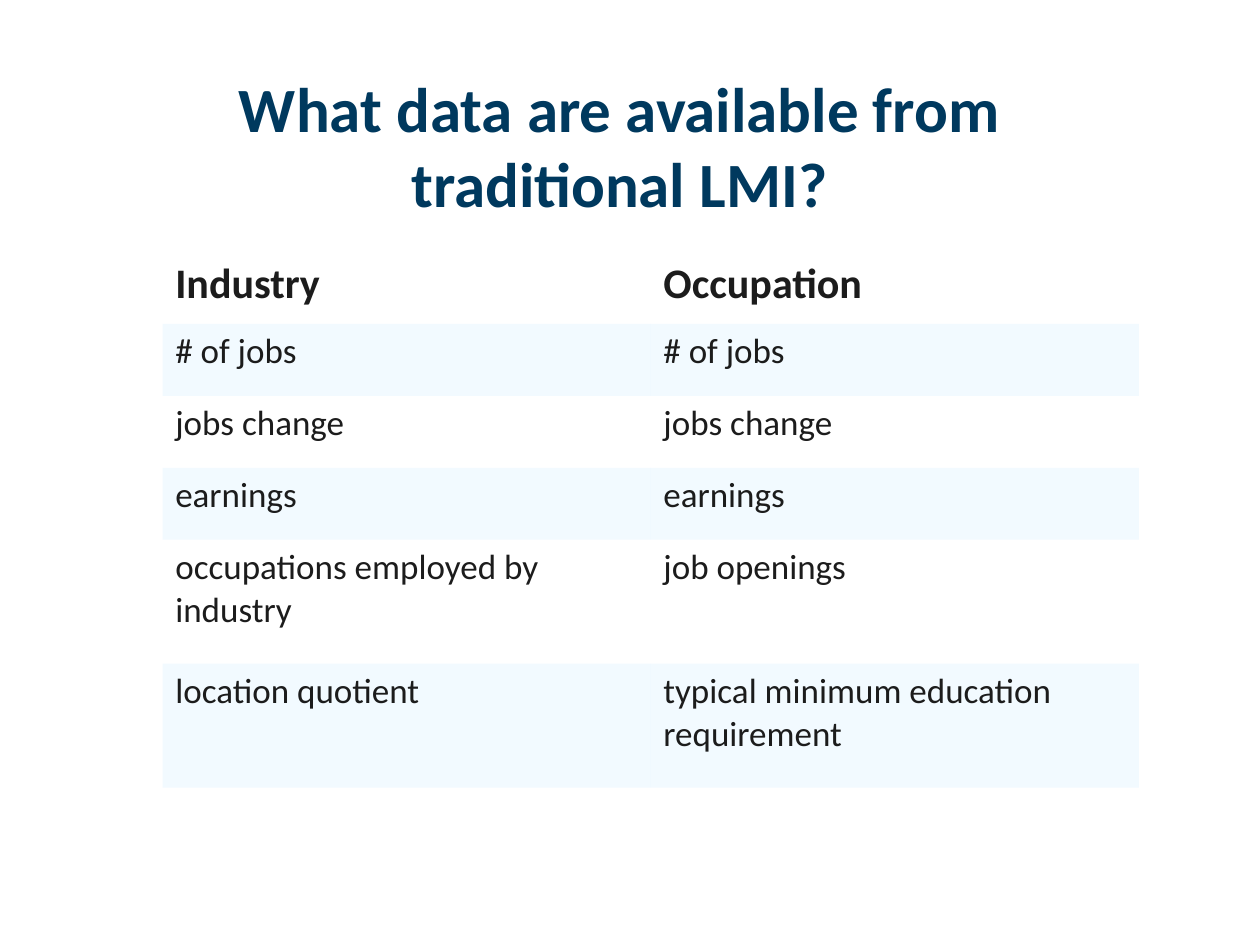
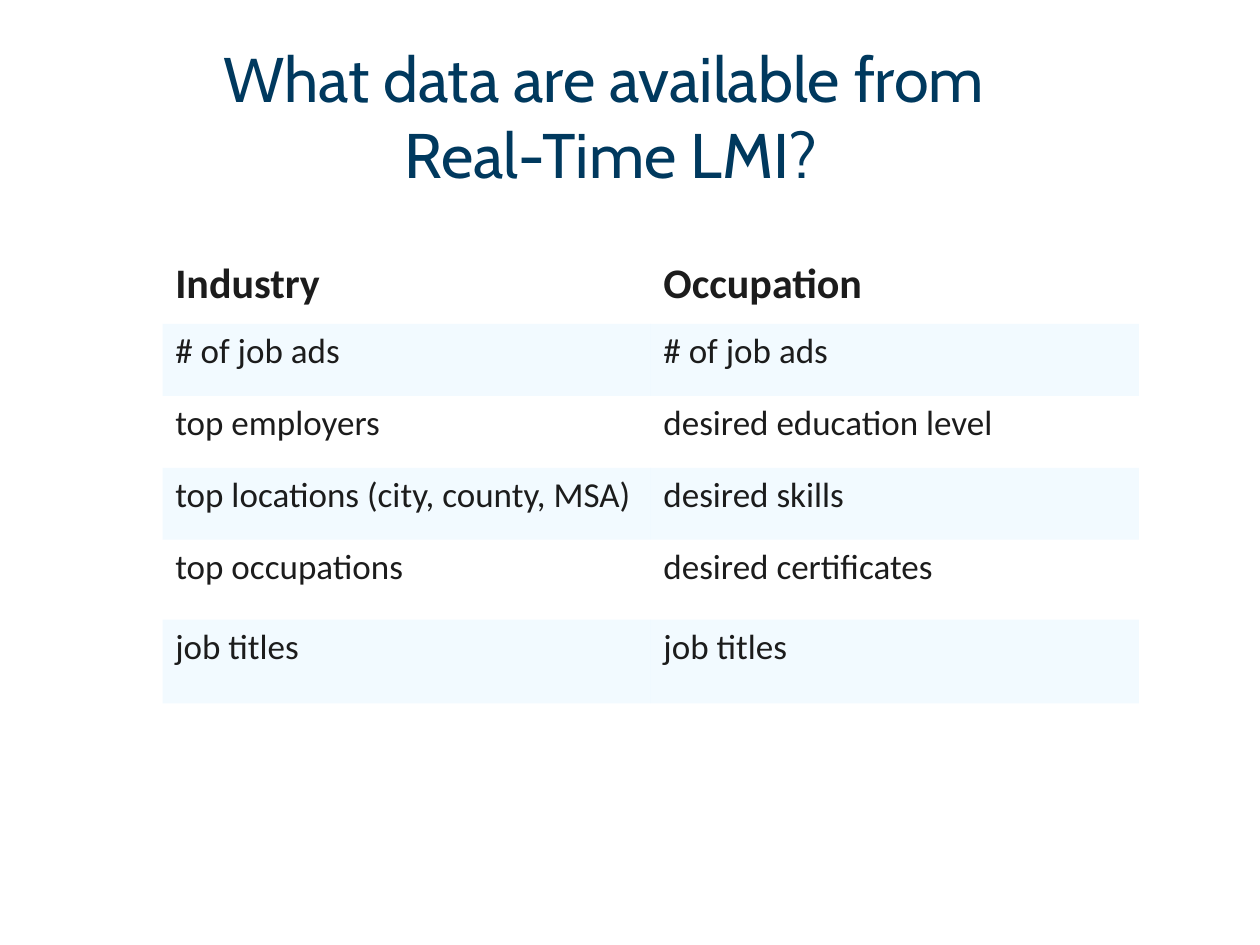
from lxml import etree
from pptx import Presentation
from pptx import util as u
from pptx.dml.color import RGBColor
from pptx.enum import text
from pptx.oxml import ns

NAVY = RGBColor(0x00, 0x39, 0x5E)
INK = RGBColor(0x1C, 0x1C, 0x1C)
BAND = RGBColor(0xBF, 0xE6, 0xFF)
BAND_OPACITY = "20000"
NO_GRID_STYLE = "{2D5ABB26-0587-4C30-8999-92F81FD0307C}"
COLUMN_WIDTH = 9.84
ROW_HEIGHT = 1.45
HEADINGS = ("Industry", "Occupation")

SLIDES = [
    {
        "title": ["What data are available from traditional LMI?"],
        "box": (2.54, 1.27, 19.9, 2.75),
        "font": "Calibri",
        "bold": True,
        "anchor": text.MSO_ANCHOR.TOP,
        "last_heights": [2.5, 2.5],
        "rows": [
            ("# of jobs", "# of jobs"),
            ("jobs change", "jobs change"),
            ("earnings", "earnings"),
            ("occupations employed by industry", "job openings"),
            ("location quotient", "typical minimum education requirement"),
        ],
    },
    {
        "title": ["What data are available from", " Real-Time LMI?"],
        "box": (2.96, 0.85, 18.42, 2.96),
        "font": "Cabin",
        "bold": False,
        "anchor": text.MSO_ANCHOR.MIDDLE,
        "last_heights": [1.61, 1.69],
        "rows": [
            ("# of job ads", "# of job ads"),
            ("top employers", "desired education level"),
            ("top locations (city, county, MSA)", "desired skills"),
            ("top occupations", "desired certificates"),
            ("job titles", "job titles"),
        ],
    },
]


def add_run(paragraph, wording, font_name, size, color, bold):
    run = paragraph.add_run()
    run.text = wording
    run.font.name = font_name
    run.font.size = u.Pt(size)
    run.font.color.rgb = color
    run.font.bold = bold


def fill_band(cell):
    cell.fill.solid()
    cell.fill.fore_color.rgb = BAND
    color = cell._tc.tcPr.find(".//" + ns.qn("a:srgbClr"))
    etree.SubElement(color, ns.qn("a:alpha"), val=BAND_OPACITY)


presentation = Presentation()
presentation.slide_width = u.Cm(25.4)
presentation.slide_height = u.Cm(19.05)

for content in SLIDES:
    slide = presentation.slides.add_slide(presentation.slide_layouts[5])

    title = slide.shapes.title
    title.left, title.top, title.width, title.height = map(u.Cm, content["box"])
    frame = title.text_frame
    frame.word_wrap = True
    frame.auto_size = text.MSO_AUTO_SIZE.NONE
    frame.vertical_anchor = content["anchor"]
    paragraph = frame.paragraphs[0]
    paragraph.alignment = text.PP_ALIGN.CENTER
    for index, line in enumerate(content["title"]):
        if index:
            paragraph.add_line_break()
        add_run(paragraph, line, content["font"], 36, NAVY, content["bold"])

    rows = [HEADINGS] + content["rows"]
    heights = [ROW_HEIGHT] * 4 + content["last_heights"]
    table = slide.shapes.add_table(
        len(rows), len(HEADINGS), u.Cm(3.28), u.Cm(5.08),
        u.Cm(COLUMN_WIDTH * len(HEADINGS)), u.Cm(sum(heights)),
    ).table
    table.first_row = False
    table.horz_banding = False
    table._tbl.tblPr.find(ns.qn("a:tableStyleId")).text = NO_GRID_STYLE
    for column in table.columns:
        column.width = u.Cm(COLUMN_WIDTH)

    for row_index, (wordings, height) in enumerate(zip(rows, heights)):
        table.rows[row_index].height = u.Cm(height)
        is_heading = row_index == 0
        for column_index, wording in enumerate(wordings):
            cell = table.cell(row_index, column_index)
            if row_index % 2:
                fill_band(cell)
            else:
                cell.fill.background()
            add_run(cell.text_frame.paragraphs[0], wording, "Calibri",
                    24 if is_heading else 20, INK, is_heading)

presentation.save("out.pptx")
